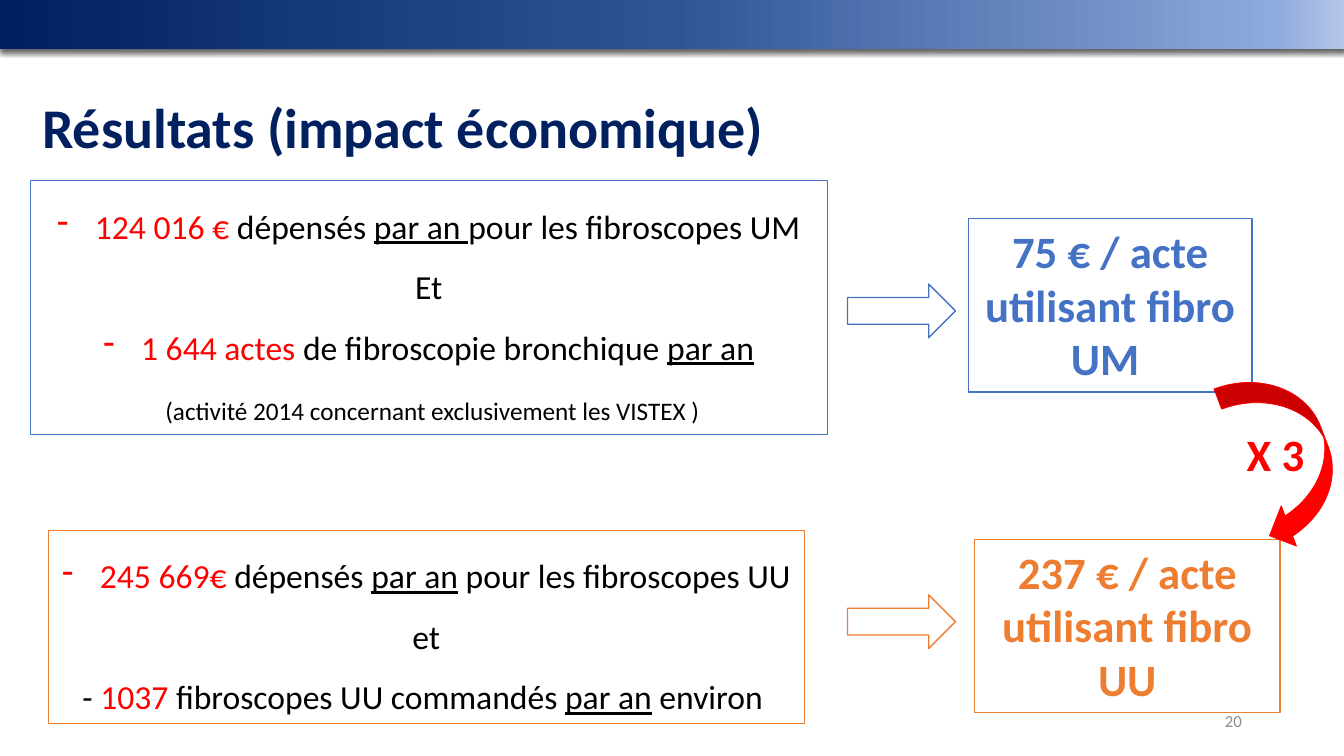
import pptx
import pptx.util
import pptx.dml.color
import pptx.enum.shapes
import pptx.enum.text
import pptx.oxml
import pptx.oxml.ns

Cm = pptx.util.Cm
Pt = pptx.util.Pt
RGBColor = pptx.dml.color.RGBColor
Shape = pptx.enum.shapes.MSO_SHAPE
Align = pptx.enum.text.PP_ALIGN
Anchor = pptx.enum.text.MSO_ANCHOR
AutoSize = pptx.enum.text.MSO_AUTO_SIZE

NAVY = RGBColor(0x00, 0x20, 0x60)
BLUE = RGBColor(0x44, 0x72, 0xC4)
ORANGE = RGBColor(0xED, 0x7D, 0x31)
RED = RGBColor(0xFF, 0x00, 0x00)
BLACK = RGBColor(0x00, 0x00, 0x00)
WHITE = RGBColor(0xFF, 0xFF, 0xFF)
GREY = RGBColor(0x8C, 0x8C, 0x8C)
A_NS = pptx.oxml.ns.nsdecls("a")


def write(paragraph, text, color, **formats):
    run = paragraph.add_run()
    run.text = text
    run.font.color.rgb = color
    for name, value in {"name": "Calibri", **formats}.items():
        setattr(run.font, name, value)


def add_text(place, align, wrap=True, anchor=Anchor.TOP):
    """Add an empty text box; its first paragraph gets the alignment."""
    box = slide.shapes.add_textbox(*map(Cm, place))
    frame = box.text_frame
    frame.auto_size = AutoSize.SHAPE_TO_FIT_TEXT if anchor == Anchor.TOP else AutoSize.NONE
    frame.word_wrap = wrap
    frame.vertical_anchor = anchor
    frame.paragraphs[0].alignment = align
    return box


prs = pptx.Presentation()
prs.slide_width = Cm(33.87)
prs.slide_height = Cm(19.05)
slide = prs.slides.add_slide(prs.slide_layouts[5])

title = slide.shapes.title
title_place = {"left": 0.81, "top": 1.45, "width": 31.55, "height": 3.68}
for side, length in title_place.items():
    setattr(title, side, Cm(length))
title.text_frame.vertical_anchor = Anchor.MIDDLE
heading = title.text_frame.paragraphs[0]
heading.alignment = Align.LEFT
heading.line_spacing = 0.9
write(heading, "Résultats (impact économique)", NAVY, size=Pt(40), bold=True)

page_number = add_text((23.93, 17.65, 7.62, 1.02), Align.RIGHT, anchor=Anchor.MIDDLE)
write(page_number.text_frame.paragraphs[0], "20", GREY, size=Pt(12))

# Gradient band across the top
band = slide.shapes.add_shape(Shape.RECTANGLE, 0, 0, prs.slide_width, Cm(1.24))
band.line.fill.background()
band.fill.gradient()
band.fill.gradient_angle = 0
stops = band.fill._fill._gradFill.gsLst
for stop in list(stops):
    stops.remove(stop)
for percent, color in ((0, "002060"), (50, "2F5597"), (95, "8FAADC"), (100, "B4C7E7")):
    stops.append(pptx.oxml.parse_xml(
        f'<a:gs {A_NS} pos="{percent * 1000}"><a:srgbClr val="{color}"/></a:gs>'))
band._element.spPr.append(pptx.oxml.parse_xml(
    f'<a:effectLst {A_NS}><a:outerShdw blurRad="{Pt(4.5)}" dist="{Pt(1.5)}" '
    'dir="5400000" algn="t" rotWithShape="0"><a:srgbClr val="000000">'
    '<a:alpha val="63000"/></a:srgbClr></a:outerShdw></a:effectLst>'))

# Each paragraph: (bulleted, runs); each run: (text, colour, formats)
UNDERLINED = {"underline": True}
reusable_facts = [
    (True, [("124 016 €", RED, {}), (" dépensés ", BLACK, {}),
            ("par an ", BLACK, UNDERLINED), ("pour les fibroscopes UM", BLACK, {})]),
    (False, [("Et", BLACK, {})]),
    (True, [("1 644 actes ", RED, {}), ("de fibroscopie bronchique ", BLACK, {}),
            ("par an", BLACK, UNDERLINED)]),
    (False, [(" ", BLACK, {}),
             ("(activité 2014 concernant exclusivement les VISTEX )", BLACK, {"size": Pt(18)})]),
]
single_use_facts = [
    (True, [("245 669€ ", RED, {}), ("dépensés ", BLACK, {}),
            ("par an", BLACK, UNDERLINED), (" pour les fibroscopes UU", BLACK, {})]),
    (False, [("et", BLACK, {})]),
    (False, [("- ", BLACK, {}), ("1037 ", RED, {}), ("fibroscopes UU commandés ", BLACK, {}),
             ("par an", BLACK, UNDERLINED), (" environ ", BLACK, {})]),
]

# Facts, arrow and cost per procedure, for single-use and reusable scopes
scenarios = [
    (ORANGE, (1.22, 13.36, 19.05, 4.88), single_use_facts, 14.99,
     (24.56, 13.59, 7.7, 4.37), "237 € / acte utilisant fibro UU"),
    (BLUE, (0.76, 4.55, 20.09, 6.4), reusable_facts, 7.16,
     (24.41, 5.51, 7.14, 4.37), "75 € / acte utilisant fibro UM "),
]
for color, facts_place, facts, arrow_top, cost_place, cost in scenarios:
    facts_box = add_text(facts_place, Align.CENTER, wrap=False)
    facts_box.line.color.rgb = color
    facts_box.line.width = Pt(0.75)
    frame = facts_box.text_frame
    for index, (bulleted, runs) in enumerate(facts):
        paragraph = frame.add_paragraph() if index else frame.paragraphs[0]
        if bulleted:
            properties = paragraph._p.get_or_add_pPr()
            properties.set("marL", str(Cm(0.95)))
            properties.set("indent", str(-Cm(0.95)))
            for bullet in ("<a:buFontTx {}/>", '<a:buChar {} char="-"/>'):
                properties.append(pptx.oxml.parse_xml(bullet.format(A_NS)))
        paragraph.alignment = Align.CENTER
        paragraph.line_spacing = 1.5
        for text, text_color, formats in runs:
            write(paragraph, text, text_color, **{"size": Pt(24), **formats})

    arrow = slide.shapes.add_shape(
        Shape.RIGHT_ARROW, Cm(21.36), Cm(arrow_top), Cm(2.72), Cm(1.35))
    arrow.shadow.inherit = False

    cost_box = add_text(cost_place, Align.CENTER)
    write(cost_box.text_frame.paragraphs[0], cost, color, size=Pt(32), bold=True)
    for outlined in (arrow, cost_box):
        outlined.fill.solid()
        outlined.fill.fore_color.rgb = WHITE
        outlined.line.color.rgb = color
        outlined.line.width = Pt(1)

# Ratio between the two costs
ratio = add_text((31.17, 10.64, 1.98, 1.63), Align.LEFT, wrap=False)
write(ratio.text_frame.paragraphs[0], "X 3", RED, size=Pt(32), bold=True)

ratio_arrow = slide.shapes.add_shape(
    Shape.CURVED_LEFT_ARROW, Cm(31.32), Cm(9.27), Cm(2.18), Cm(4.5))
ratio_arrow.rotation = 339.3
ratio_arrow.shadow.inherit = False
ratio_arrow.fill.solid()
ratio_arrow.fill.fore_color.rgb = RED
ratio_arrow.line.color.rgb = RED
ratio_arrow.line.width = Pt(0.5)

prs.save("out.pptx")
